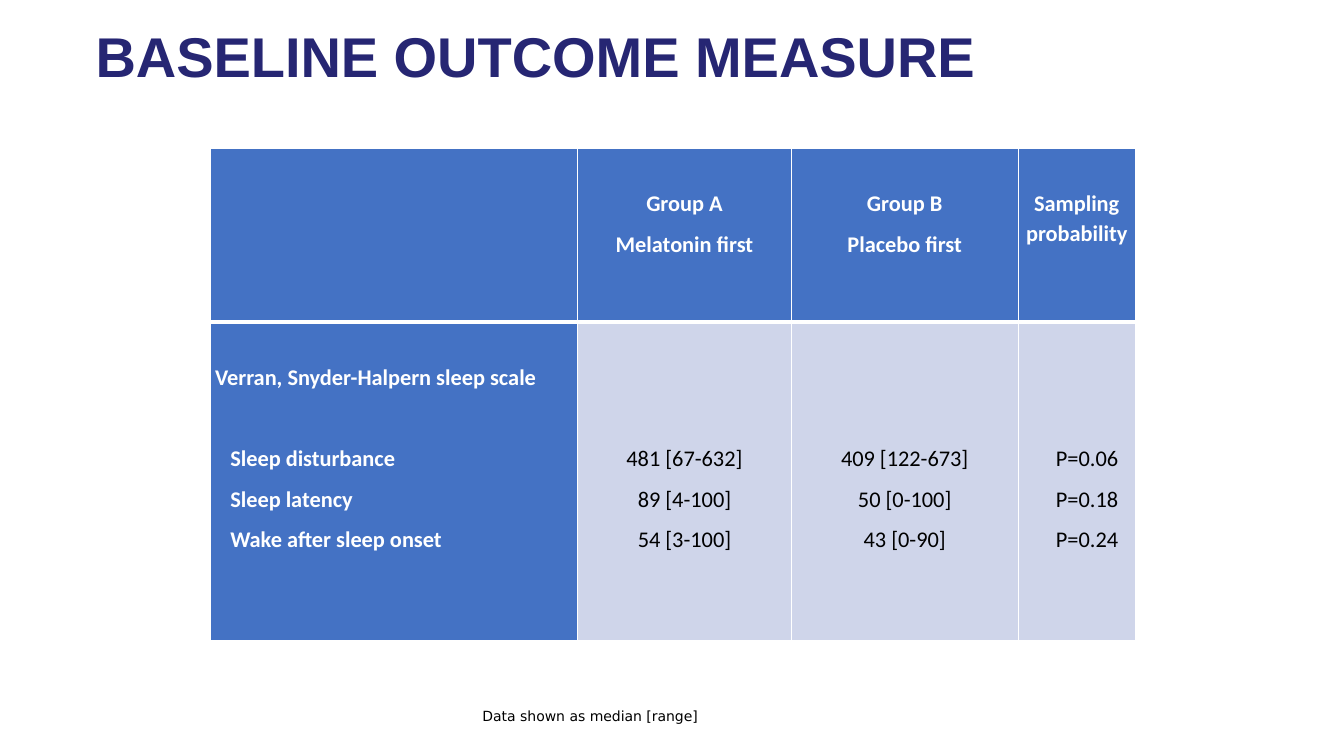
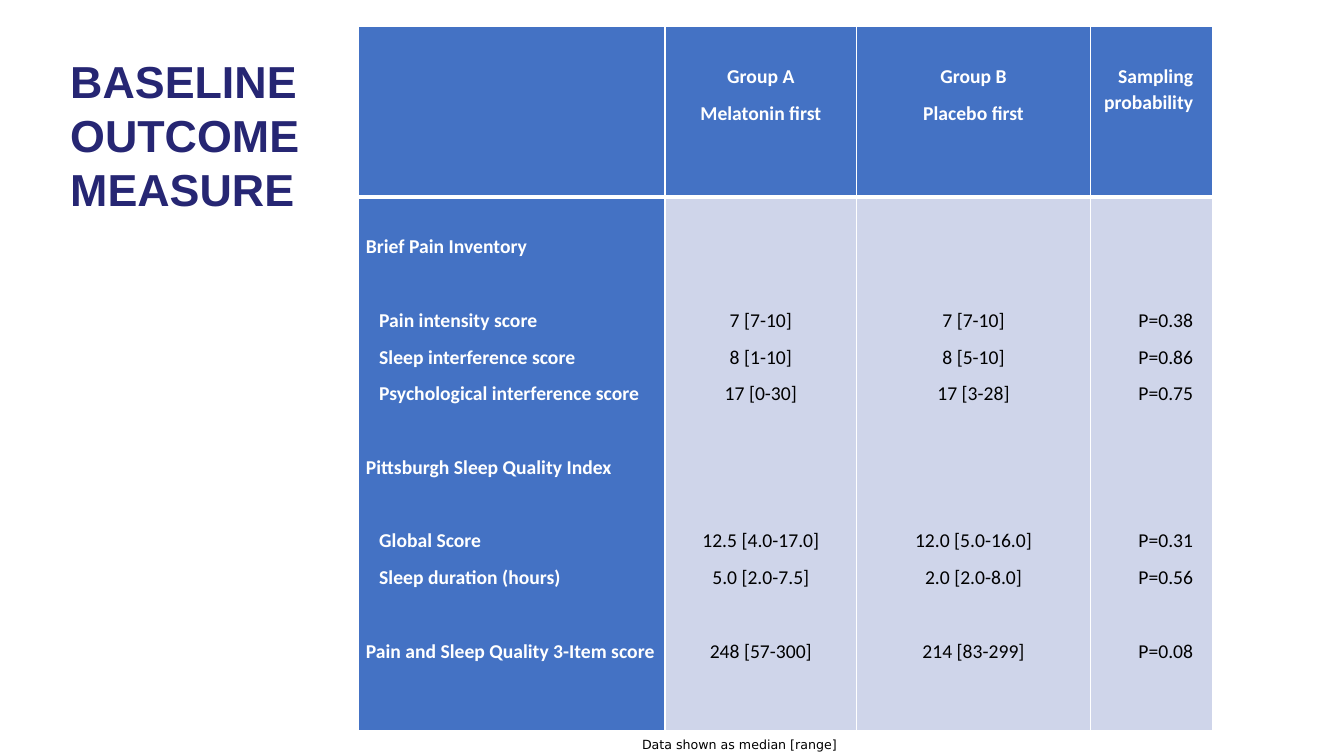
from dataclasses import dataclass
from lxml.etree import SubElement
from pptx import Presentation
from pptx.dml.color import RGBColor
from pptx.enum.text import PP_ALIGN
from pptx.oxml.ns import qn
from pptx.util import Cm, Pt

TITLE = "BASELINE OUTCOME MEASURE"
NOTE = "Data shown as median [range]"
HEADS = [
    [],
    ["", "Group A", "Melatonin first"],
    ["", "Group B", "Placebo first"],
    ["", "Sampling probability"],
]
GAP = (0, "", "", "", "")

SLEEP = [
    GAP,
    (0, "Verran, Snyder-Halpern sleep scale", "", "", ""),
    GAP,
    (1, "Sleep disturbance", "481 [67-632]", "409 [122-673]", "P=0.06"),
    (1, "Sleep latency", "89 [4-100]", "50 [0-100]", "P=0.18"),
    (1, "Wake after sleep onset", "54 [3-100]", "43 [0-90]", "P=0.24"),
]
PAIN = [
    GAP,
    (0, "Brief Pain Inventory", "", "", ""),
    GAP,
    (1, "Pain intensity score", "7 [7-10]", "7 [7-10]", "P=0.38"),
    (1, "Sleep interference score", "8 [1-10]", "8 [5-10]", "P=0.86"),
    (1, "Psychological interference score", "17 [0-30]", "17 [3-28]", "P=0.75"),
    GAP,
    (0, "Pittsburgh Sleep Quality Index", "", "", ""),
    GAP,
    (1, "Global Score", "12.5 [4.0-17.0]", "12.0 [5.0-16.0]", "P=0.31"),
    (1, "Sleep duration (hours)", "5.0 [2.0-7.5]", "2.0 [2.0-8.0]", "P=0.56"),
    GAP,
    (0, "Pain and Sleep Quality 3-Item score", "248 [57-300]", "214 [83-299]", "P=0.08"),
]

LEFT, MID, RIGHT = PP_ALIGN.LEFT, PP_ALIGN.CENTER, PP_ALIGN.RIGHT

SLIDES = [
    dict(body=SLEEP, at=(5.29, 3.73), cols=(9.27, 5.38, 5.72, 2.95),
         rows=(4.39, 8.03), size=16, inset=0.13, edge=0.43, last=MID,
         title=(2.16, 0.43, 27.13, 1.96), big=40,
         note=(11.91, 17.68, 10.03, 0.69), small=10),
    dict(body=PAIN, at=(9.04, 0.67), cols=(7.72, 4.83, 5.89, 3.07),
         rows=(4.29, 13.44), size=14, inset=0.18, edge=0.48, last=RIGHT,
         title=(1.52, 1.24, 7.52, 4.37), big=32,
         note=(15.93, 18.42, 10.57, 0.64), small=9),
]


@dataclass(frozen=True)
class Theme:
    navy: str = "262673"
    blue: str = "4472C4"
    pale: str = "CFD5EA"
    white: str = "FFFFFF"
    black: str = "000000"
    head: str = "Arial"
    text: str = "Calibri"
    foot: str = "DejaVu Sans"
    lead: float = 1.07
    after: int = 8
    thin: int = 1
    thick: int = 3


THEME = Theme()


def write(frame, lines, size, font, color, bold=False, align=LEFT, lead=1.0, after=0):
    step = size * 1.22 * lead + after
    top, gap, para = 0, after, None
    for level, text in lines:
        if not text:
            if para is None:
                top += step
            else:
                gap += step
                para.space_after = Pt(gap)
            continue
        para = frame.add_paragraph() if para else frame.paragraphs[0]
        gap = after
        para.alignment, para.line_spacing, para.space_after = align, lead, Pt(gap)
        if level:
            para._p.get_or_add_pPr().set("marL", str(Pt(size * 0.68 * level)))
        run = para.add_run()
        run.text = text
        run.font.size, run.font.name, run.font.bold = Pt(size), font, bold
        run.font.color.rgb = RGBColor.from_string(color)
    return top


def label(slide, box, text, **form):
    frame = slide.shapes.add_textbox(*map(Cm, box)).text_frame
    frame.word_wrap = True
    write(frame, [(0, text)], **form)


def border(cell, widths):
    props = cell._tc.get_or_add_tcPr()
    for spot, (side, width) in enumerate(widths.items()):
        line = SubElement(props, qn(f"a:ln{side}"), w=str(Pt(width)))
        fill = SubElement(line, qn("a:solidFill"))
        SubElement(fill, qn("a:srgbClr"), val=THEME.white)
        props.insert(spot, line)


def grid(slide, plan):
    place = [*plan["at"], sum(plan["cols"]), sum(plan["rows"])]
    table = slide.shapes.add_table(2, 4, *map(Cm, place)).table
    table.horz_banding = False
    for part, size in zip(table.columns, plan["cols"]):
        part.width = Cm(size)
    for part, size in zip(table.rows, plan["rows"]):
        part.height = Cm(size)
    levels, *texts = zip(*plan["body"])
    body = [list(zip(levels, texts[0]))]
    body += [[(0, text) for text in column] for column in texts[1:]]
    heads = [[(0, text) for text in column] for column in HEADS]
    aligns = [(MID, MID, MID, plan["last"]), (LEFT, MID, MID, RIGHT)]
    for row, columns in enumerate((heads, body)):
        for col, lines in enumerate(columns):
            cell, align = table.cell(row, col), aligns[row][col]
            dark = row == 0 or col == 0
            cell.fill.solid()
            cell.fill.fore_color.rgb = RGBColor.from_string(THEME.blue if dark else THEME.pale)
            top = write(cell.text_frame, lines, size=plan["size"], font=THEME.text,
                        color=THEME.white if dark else THEME.black, bold=dark,
                        align=align, lead=THEME.lead, after=THEME.after)
            cell.margin_top, cell.margin_bottom = Pt(top), 0
            cell.margin_left = Cm(plan["inset"])
            cell.margin_right = Cm(plan["edge" if align == RIGHT else "inset"])
            border(cell, dict(L=THEME.thin, R=THEME.thin,
                              T=THEME.thick if row else THEME.thin,
                              B=THEME.thin if row else THEME.thick))


def main():
    deck = Presentation()
    deck.slide_width, deck.slide_height = Cm(33.87), Cm(19.05)
    for plan in SLIDES:
        slide = deck.slides.add_slide(deck.slide_layouts[6])
        grid(slide, plan)
        label(slide, plan["title"], TITLE, size=plan["big"], font=THEME.head,
              color=THEME.navy, bold=True)
        label(slide, plan["note"], NOTE, size=plan["small"], font=THEME.foot,
              color=THEME.black, lead=THEME.lead, after=THEME.after)
    deck.save("out.pptx")


if __name__ == "__main__":
    main()
